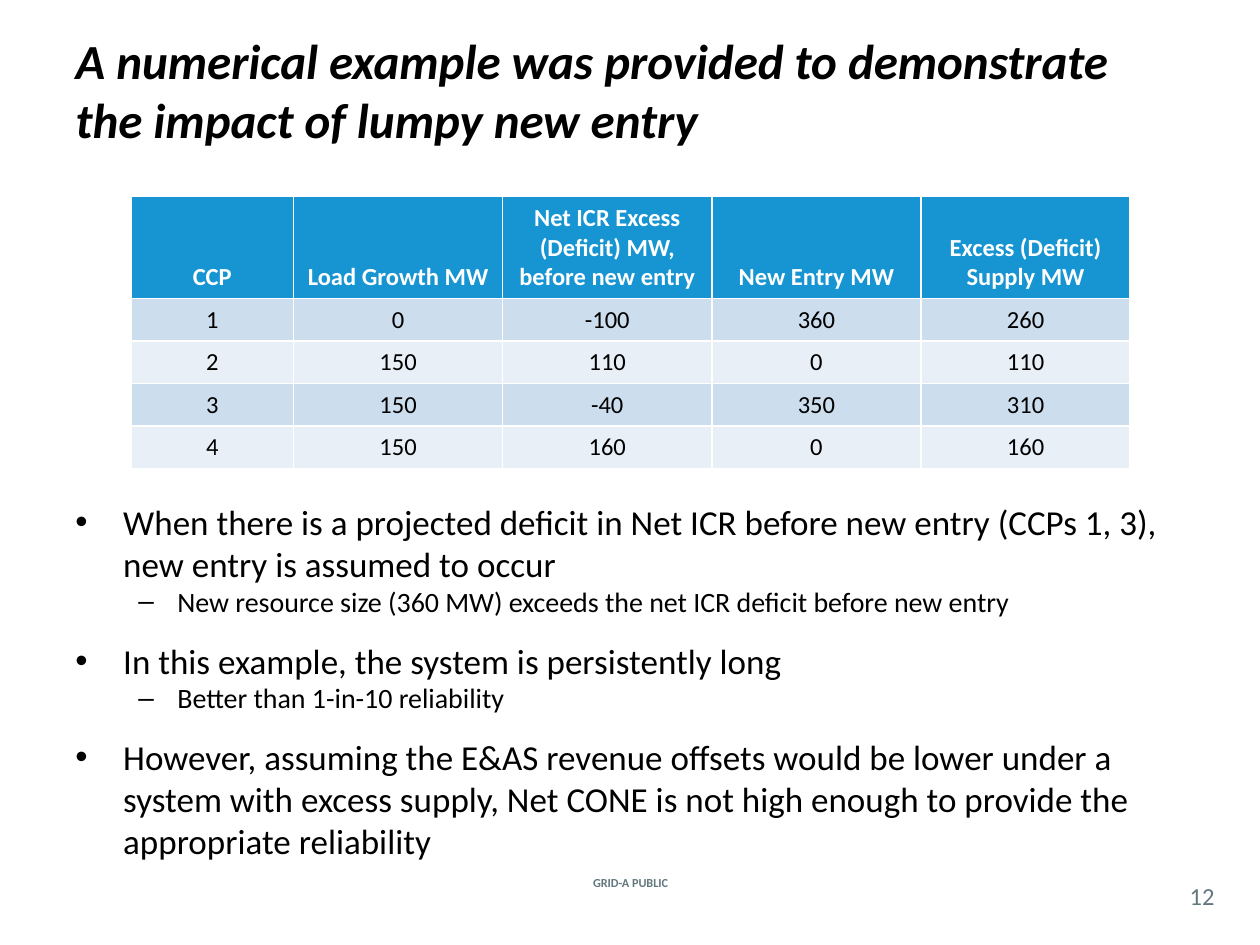
"""Build the slide on the numerical example of lumpy new entry."""
import pptx
import pptx.dml.color
import pptx.enum.text
import pptx.oxml.ns
import pptx.util
from lxml import etree

RGB = pptx.dml.color.RGBColor
BLACK, WHITE, GREY = RGB(0, 0, 0), RGB(255, 255, 255), RGB(0x62, 0x77, 0x7F)
HEADER, BAND, LIGHT = RGB(0x17, 0x95, 0xD2), RGB(0xCC, 0xDD, 0xEE), RGB(0xE8, 0xEF, 0xF7)
ALIGN = pptx.enum.text.PP_ALIGN
ANCHOR = pptx.enum.text.MSO_ANCHOR
Inches, Pt = pptx.util.Inches, pptx.util.Pt

prs = pptx.Presentation()
prs.slide_width, prs.slide_height = W, H = Inches(10), Inches(7.5)
s = prs.slides.add_slide(prs.slide_layouts[5])


def write(p, text, size, color=BLACK, bold=False, italic=False, align=ALIGN.LEFT):
    p.text = text
    p.alignment = align
    for r in p.runs:
        r.font.name, r.font.size = "Calibri", Pt(size)
        r.font.bold, r.font.italic = bold, italic
        r.font.color.rgb = color


def textbox(x, y, w, h, anchor=ANCHOR.TOP):
    tf = s.shapes.add_textbox(int(W * x), int(H * y), int(W * w), int(H * h)).text_frame
    tf.word_wrap = True
    tf.vertical_anchor = anchor
    return tf


title = s.shapes.title
title.left, title.top = int(W * 0.05), int(H * 0.01)
title.width, title.height = int(W * 0.9), int(H * 0.17)
tf = title.text_frame
tf.auto_size = pptx.enum.text.MSO_AUTO_SIZE.NONE
tf.vertical_anchor = ANCHOR.MIDDLE
write(tf.paragraphs[0], "A numerical example was provided to demonstrate the impact of lumpy new entry",
      28, bold=True, italic=True)

rows = [
    ["CCP", "Load Growth MW", "Net ICR Excess (Deficit) MW, before new entry",
     "New Entry MW", "Excess (Deficit) Supply MW"],
    ["1", "0", "-100", "360", "260"],
    ["2", "150", "110", "0", "110"],
    ["3", "150", "-40", "350", "310"],
    ["4", "150", "160", "0", "160"],
]
table = s.shapes.add_table(len(rows), len(rows[0]), Inches(1.04), Inches(1.56),
                           Inches(7.92), Inches(2.13)).table
for i, col in enumerate(table.columns):
    col.width = Inches(1.66 if i else 1.29)
for i, values in enumerate(rows):
    table.rows[i].height = Inches(0.31 if i else 0.74)
    for j, value in enumerate(values):
        cell = table.cell(i, j)
        cell.fill.solid()
        cell.fill.fore_color.rgb = HEADER if i == 0 else BAND if i % 2 else LIGHT
        cell.vertical_anchor = ANCHOR.MIDDLE if i else ANCHOR.BOTTOM
        write(cell.text_frame.paragraphs[0], value, 14, BLACK if i else WHITE,
              bold=i == 0, align=ALIGN.CENTER)

bullets = [
    (0, "When there is a projected deficit in Net ICR before new entry (CCPs 1, 3), "
        "new entry is assumed to occur"),
    (1, "New resource size (360 MW) exceeds the net ICR deficit before new entry"),
    (0, "In this example, the system is persistently long"),
    (1, "Better than 1-in-10 reliability"),
    (0, "However, assuming the E&AS revenue offsets would be lower under a system with "
        "excess supply, Net CONE is not high enough to provide the appropriate reliability"),
]
levels = [("•", 0.38, 0.38, 20, 12), ("–", 0.81, 0.31, 16, 0)]
tf = textbox(0.05, 0.523, 0.9, 0.4)
for i, (level, text) in enumerate(bullets):
    char, margin, hang, size, before = levels[level]
    p = tf.add_paragraph() if i else tf.paragraphs[0]
    p.level = level
    p.space_before = Pt(before if i else 0)
    pPr = p._p.get_or_add_pPr()
    pPr.set("marL", str(Inches(margin)))
    pPr.set("indent", str(-Inches(hang)))
    etree.SubElement(pPr, pptx.oxml.ns.qn("a:buFont"), typeface="Arial")
    etree.SubElement(pPr, pptx.oxml.ns.qn("a:buChar"), char=char)
    write(p, text, size)

tf = textbox(0.427, 0.923, 0.147, 0.023, ANCHOR.MIDDLE)
write(tf.paragraphs[0], "GRID-A PUBLIC", 7, GREY, bold=True, align=ALIGN.CENTER)

tf = textbox(0.933, 0.928, 0.042, 0.039, ANCHOR.MIDDLE)
tf.margin_left = tf.margin_right = tf.margin_top = tf.margin_bottom = 0
write(tf.paragraphs[0], "12", 14, GREY, align=ALIGN.CENTER)

prs.save("out.pptx")
